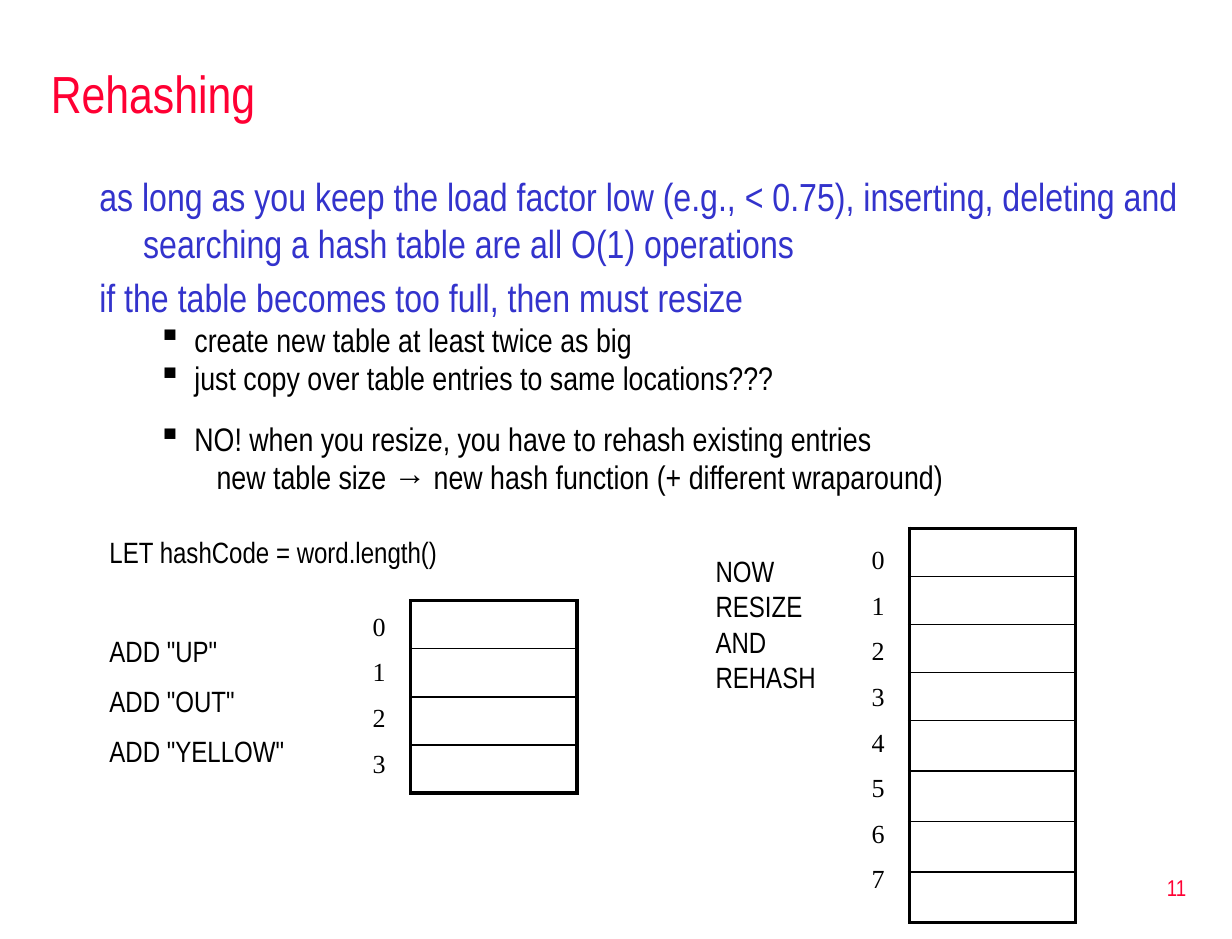
from dataclasses import dataclass

from lxml import etree
from pptx import Presentation
from pptx.dml.color import RGBColor
from pptx.enum.text import MSO_ANCHOR, PP_ALIGN
from pptx.oxml.ns import qn
from pptx.util import Cm, Pt

RED = RGBColor(0xFF, 0x00, 0x33)
BLUE = RGBColor(0x33, 0x33, 0xCC)
BLACK = RGBColor(0x00, 0x00, 0x00)
TOP, MIDDLE = MSO_ANCHOR.TOP, MSO_ANCHOR.MIDDLE
LEFT, RIGHT = PP_ALIGN.LEFT, PP_ALIGN.RIGHT
NARROW, SERIF = "Arial Narrow", "Times New Roman"
OUTER, INNER = Pt(2.25), Pt(1)


@dataclass
class Style:
    size: float
    color: RGBColor = BLACK
    font: str = NARROW
    before: float = 0
    line: float = 1
    margin: float = 0
    indent: float = 0
    bullet: str = ""
    align: PP_ALIGN = LEFT


TITLE = Style(32, RED)
PAGE_NUMBER = Style(14, RED, align=RIGHT)
POINT = Style(24, BLUE, before=4.8, margin=0.95, indent=-0.95)
SUBPOINT = Style(20, before=4, line=0.8, margin=2.06, indent=-0.79, bullet="▪")
DETAIL = Style(20, before=4, line=0.8, margin=3.18, indent=-0.64)
STEP = Style(18, before=9)
FIRST_STEP = Style(18, before=39.5)
INDEX = Style(16, font=SERIF, before=8.8)


def add_text(slide, box, paragraphs, anchor=TOP):
    frame = slide.shapes.add_textbox(*map(Cm, box)).text_frame
    frame.word_wrap = True
    frame.vertical_anchor = anchor
    for number, (text, style) in enumerate(paragraphs):
        paragraph = frame.add_paragraph() if number else frame.paragraphs[0]
        paragraph.alignment = style.align
        paragraph.line_spacing = style.line
        paragraph.space_before = Pt(style.before)
        properties = paragraph._p.get_or_add_pPr()
        properties.set("marL", str(Cm(style.margin)))
        properties.set("indent", str(Cm(style.indent)))
        if style.bullet:
            etree.SubElement(properties, qn("a:buChar"), char=style.bullet)
        run = paragraph.add_run()
        run.text = text
        run.font.name = style.font
        run.font.size = Pt(style.size)
        run.font.color.rgb = style.color


def set_border(cell, side, width):
    line = etree.SubElement(cell._tc.get_or_add_tcPr(), qn(f"a:ln{side}"), w=str(width))
    fill = etree.SubElement(line, qn("a:solidFill"))
    etree.SubElement(fill, qn("a:srgbClr"), val=str(BLACK))


def add_hash_table(slide, box, row_heights, index_top):
    left, top, width = box
    count = len(row_heights)
    table = slide.shapes.add_table(
        count, 1, Cm(left), Cm(top), Cm(width), Cm(sum(row_heights))
    ).table
    table.first_row = table.horz_banding = False
    for number, height in enumerate(row_heights):
        table.rows[number].height = Cm(height)
        cell = table.cell(number, 0)
        set_border(cell, "L", OUTER)
        set_border(cell, "R", OUTER)
        set_border(cell, "T", OUTER if number == 0 else INNER)
        set_border(cell, "B", OUTER if number == count - 1 else INNER)
        cell.fill.background()
    index_box = (left - 1.07, top + index_top, 1.07, count)
    add_text(slide, index_box, [(str(number), INDEX) for number in range(count)])


def add_heading(slide, box):
    add_text(slide, box, [("Rehashing", TITLE)], MIDDLE)


def add_explanation(slide, box):
    left, top, width, height = box
    add_text(slide, (left, top, width, 4.88), [
        ("as long as you keep the load factor low (e.g., < 0.75), inserting, "
         "deleting and searching a hash table are all O(1) operations", POINT),
        ("if the table becomes too full, then must resize", POINT),
        ("create new table at least twice as big", SUBPOINT),
        ("just copy over table entries to same locations???", SUBPOINT),
    ])
    add_text(slide, (left, top + 5.5, width, height - 5.5), [
        ("NO! when you resize, you have to rehash existing entries", SUBPOINT),
        ("new table size → new hash function (+ different wraparound)", DETAIL),
    ])


def add_small_example(slide, box):
    left, top, width, height = box
    add_text(slide, (left, top, 11.23, height), [
        ("LET hashCode = word.length()", STEP),
        ('ADD "UP"', FIRST_STEP),
        ('ADD "OUT"', STEP),
        ('ADD "YELLOW"', STEP),
    ])
    add_hash_table(slide, (left + width - 3.6, top + 1.57, 3.6), [1.04] * 4, 0.08)


def add_resized_example(slide, box):
    left, top, width, height = box
    add_text(slide, (left, top + 0.42, 2.97, 3.3), [("NOW RESIZE AND REHASH", STEP)])
    rows = [1.04] * 4 + [(height - 4 * 1.04) / 4] * 4
    add_hash_table(slide, (left + width - 3.6, top, 3.6), rows, 0.21)


def add_page_number(slide, box):
    add_text(slide, box, [("11", PAGE_NUMBER)], MIDDLE)


def main():
    presentation = Presentation()
    presentation.slide_width = Cm(26.67)
    presentation.slide_height = Cm(20.32)
    slide = presentation.slides.add_slide(presentation.slide_layouts[6])
    add_page_number(slide, (20.37, 18.52, 5.56, 1.35))
    add_heading(slide, (0.85, 1.06, 25.2, 1.9))
    add_explanation(slide, (1.9, 3.6, 24.18, 7.83))
    add_resized_example(slide, (15.24, 11.43, 8.05, 8.54))
    add_small_example(slide, (2.12, 11.43, 10.37, 5.61))
    presentation.save("out.pptx")


if __name__ == "__main__":
    main()
